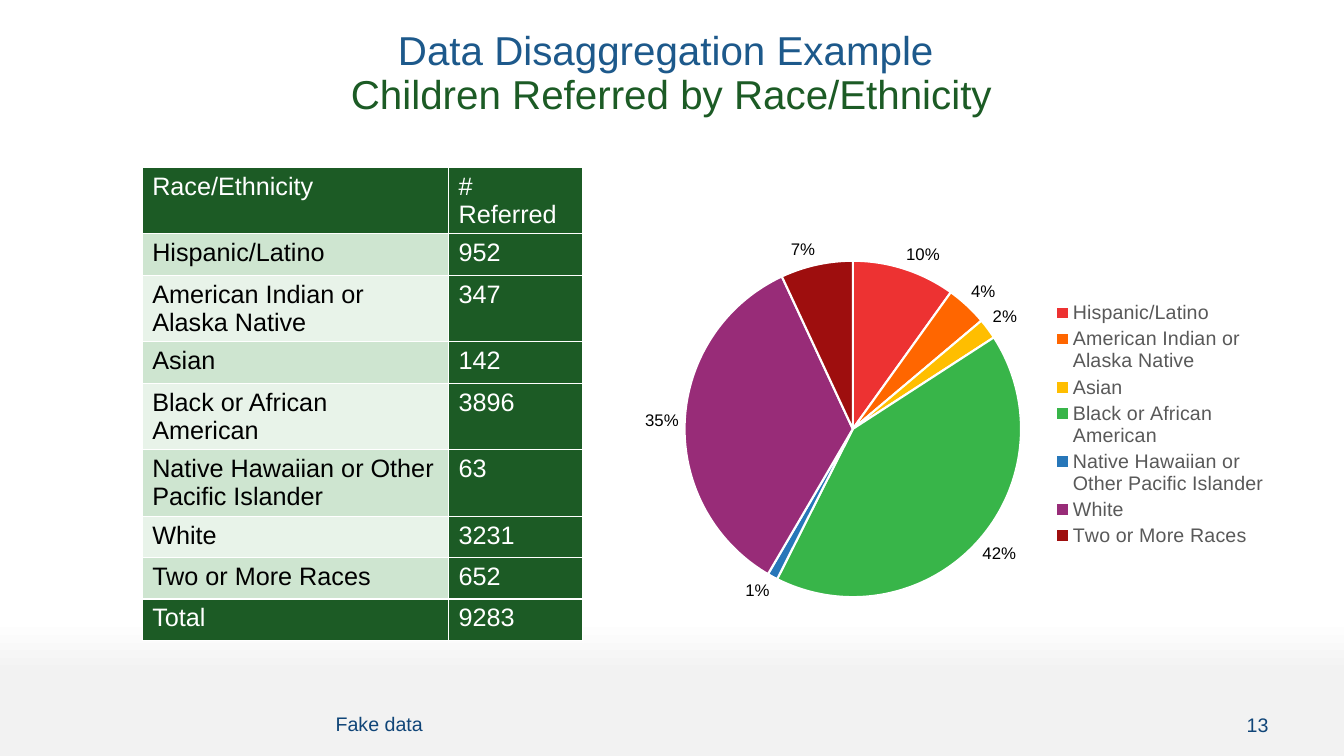
from dataclasses import dataclass

from lxml import etree
from pptx import Presentation
from pptx.chart.data import CategoryChartData
from pptx.dml.color import RGBColor
from pptx.enum.chart import XL_CHART_TYPE, XL_LABEL_POSITION, XL_LEGEND_POSITION
from pptx.enum.text import MSO_ANCHOR, MSO_AUTO_SIZE, PP_ALIGN
from pptx.oxml.ns import qn
from pptx.util import Inches, Pt

PIE = XL_CHART_TYPE.PIE
OUTSIDE_END = XL_LABEL_POSITION.OUTSIDE_END
LEGEND_RIGHT = XL_LEGEND_POSITION.RIGHT
MIDDLE = MSO_ANCHOR.MIDDLE
NO_AUTOFIT = MSO_AUTO_SIZE.NONE
LEFT, CENTER, RIGHT = PP_ALIGN.LEFT, PP_ALIGN.CENTER, PP_ALIGN.RIGHT

FONT = "Arial"
WHITE = RGBColor(0xFF, 0xFF, 0xFF)
BLACK = RGBColor(0x00, 0x00, 0x00)
GRAY = RGBColor(0x59, 0x59, 0x59)
PALE_GRAY = RGBColor(0xF2, 0xF2, 0xF2)
BLUE = RGBColor(0x1D, 0x59, 0x8B)
NAVY = RGBColor(0x10, 0x45, 0x78)
GREEN = RGBColor(0x1C, 0x5B, 0x25)
BANDS = (RGBColor(0xCE, 0xE5, 0xD0), RGBColor(0xE8, 0xF3, 0xE9))

SLIDE_W, SLIDE_H = Inches(13.33), Inches(7.5)


def across(percent: float) -> int:
    return round(SLIDE_W * percent / 100)


def down(percent: float) -> int:
    return round(SLIDE_H * percent / 100)


@dataclass(frozen=True)
class Box:
    """An area in percent of the slide's width and height."""
    left: float
    top: float
    width: float
    height: float

    def emu(self) -> tuple[int, int, int, int]:
        return across(self.left), down(self.top), across(self.width), down(self.height)


@dataclass(frozen=True)
class Group:
    name: str
    referred: int
    percent: int
    color: RGBColor


@dataclass(frozen=True)
class FooterText:
    text: str
    box: Box
    align: PP_ALIGN


GROUPS = (
    Group("Hispanic/Latino", 952, 10, RGBColor(0xED, 0x32, 0x32)),
    Group("American Indian or Alaska Native", 347, 4, RGBColor(0xFF, 0x66, 0x00)),
    Group("Asian", 142, 2, RGBColor(0xFF, 0xBE, 0x00)),
    Group("Black or African American", 3896, 42, RGBColor(0x38, 0xB5, 0x49)),
    Group("Native Hawaiian or Other Pacific Islander", 63, 1, RGBColor(0x27, 0x77, 0xB9)),
    Group("White", 3231, 35, RGBColor(0x98, 0x2C, 0x78)),
    Group("Two or More Races", 652, 7, RGBColor(0x9E, 0x0E, 0x0E)),
)
FOOTERS = (
    FooterText("Fake data", Box(24.23, 92.13, 60.77, 7.2), LEFT),
    FooterText("13", Box(85, 92.13, 10.13, 7.33), RIGHT),
)
TITLE_LINES = (("Data Disaggregation Example ", BLUE),
               ("Children Referred by Race/Ethnicity", GREEN))
TITLE_BOX = Box(4.8, 3.33, 90.32, 13.07)
CHART_BOX = Box(46.96, 20.13, 48.16, 72)
TABLE_LEFT, TABLE_TOP = 10.58, 22.13
TABLE_COLUMNS = (22.8, 9.98)
TABLE_ROW = 5.47


def style_font(font, size: float, color: RGBColor) -> None:
    font.name, font.size, font.bold = FONT, Pt(size), False
    font.color.rgb = color


def set_background(s) -> None:
    fill = s.background.fill
    fill.gradient()
    fill.gradient_angle = 270
    for stop, position, color in zip(fill.gradient_stops, (0.82, 0.89), (WHITE, PALE_GRAY)):
        stop.position = position
        stop.color.rgb = color


def set_title(s) -> None:
    sp = s.shapes.title
    sp.left, sp.top, sp.width, sp.height = TITLE_BOX.emu()
    tf = sp.text_frame
    tf.text = "\v".join(text for text, _ in TITLE_LINES)
    tf.auto_size, tf.vertical_anchor, tf.word_wrap = NO_AUTOFIT, MIDDLE, True
    p = tf.paragraphs[0]
    p.alignment, p.line_spacing = CENTER, 0.9
    for r, (_, color) in zip(p.runs, TITLE_LINES):
        style_font(r.font, 28.8, color)


def add_footer(s, footer: FooterText) -> None:
    tf = s.shapes.add_textbox(*footer.box.emu()).text_frame
    tf.text = footer.text
    tf.word_wrap, tf.vertical_anchor = True, MIDDLE
    p = tf.paragraphs[0]
    p.alignment = footer.align
    style_font(p.runs[0].font, 14, NAVY)


def add_borders(cell) -> None:
    tc_pr = cell._tc.get_or_add_tcPr()
    for side in ("a:lnL", "a:lnR", "a:lnT", "a:lnB"):
        ln = etree.SubElement(tc_pr, qn(side), w=str(Pt(1)))
        fill = etree.SubElement(ln, qn("a:solidFill"))
        etree.SubElement(fill, qn("a:srgbClr"), val=str(WHITE))


def add_referral_table(s) -> None:
    total = sum(group.referred for group in GROUPS)
    rows = [("Race/Ethnicity", "# Referred"),
            *((group.name, str(group.referred)) for group in GROUPS),
            ("Total", str(total))]
    box = Box(TABLE_LEFT, TABLE_TOP, sum(TABLE_COLUMNS), TABLE_ROW * len(rows))
    table = s.shapes.add_table(len(rows), len(TABLE_COLUMNS), *box.emu()).table
    table.horz_banding = False
    for column, width in zip(table.columns, TABLE_COLUMNS):
        column.width = across(width)
    for i, row in enumerate(rows):
        table.rows[i].height = down(TABLE_ROW)
        for j, text in enumerate(row):
            cell = table.cell(i, j)
            banded = j == 0 and 0 < i < len(rows) - 1
            add_borders(cell)
            cell.fill.solid()
            cell.fill.fore_color.rgb = BANDS[(i - 1) % 2] if banded else GREEN
            cell.text_frame.text = text
            r = cell.text_frame.paragraphs[0].runs[0]
            style_font(r.font, 18, BLACK if banded else WHITE)


def add_share_chart(s) -> None:
    data = CategoryChartData()
    data.categories = [group.name for group in GROUPS]
    data.add_series("Series 1", [group.percent for group in GROUPS])
    chart = s.shapes.add_chart(PIE, *CHART_BOX.emu(), data).chart
    style_font(chart.font, 10, BLACK)
    chart.has_title = False
    chart.has_legend = True
    chart.legend.position = LEGEND_RIGHT
    chart.legend.include_in_layout = False
    style_font(chart.legend.font, 14, GRAY)

    # Slices and their labels
    plot = chart.plots[0]
    plot.vary_by_categories = True
    for i, group in enumerate(GROUPS):
        slice_format = plot.series[0].points[i].format
        slice_format.fill.solid()
        slice_format.fill.fore_color.rgb = group.color
        slice_format.line.color.rgb = WHITE
        slice_format.line.width = Pt(1.5)
    labels = plot.series[0].data_labels
    labels.show_percentage, labels.show_value = True, False
    labels.number_format, labels.number_format_is_linked = "0%", False
    labels.position = OUTSIDE_END
    style_font(labels.font, 12, BLACK)


def main() -> None:
    prs = Presentation()
    prs.slide_width, prs.slide_height = SLIDE_W, SLIDE_H
    s = prs.slides.add_slide(prs.slide_layouts[5])
    set_background(s)
    set_title(s)
    add_referral_table(s)
    add_share_chart(s)
    for footer in FOOTERS:
        add_footer(s, footer)
    prs.save("out.pptx")


if __name__ == "__main__":
    main()
